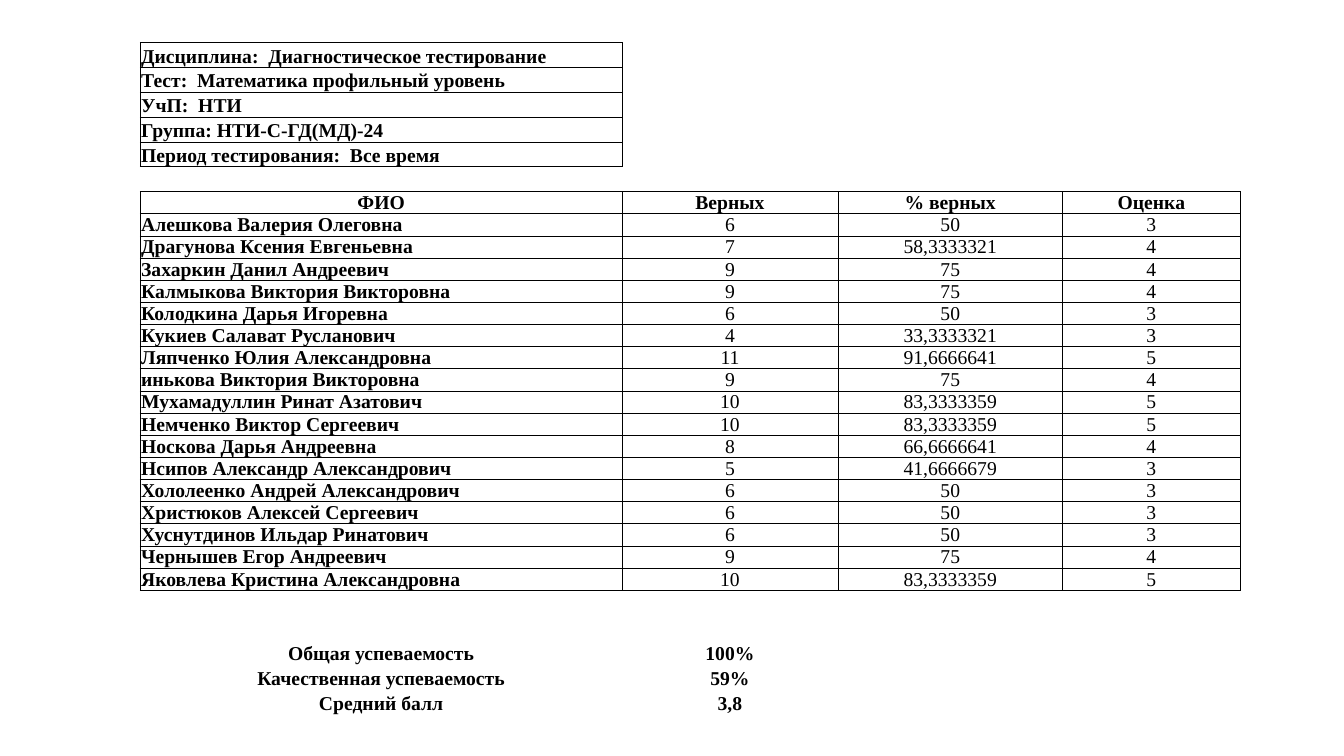
from dataclasses import dataclass

from lxml import etree
from pptx import Presentation, util as u
from pptx.dml.color import RGBColor
from pptx.enum import text
from pptx.oxml import ns


@dataclass
class Theme:
    ink: str = "000000"
    font: str = "Times New Roman"
    size: int = 14
    line: float = 0.5
    style: str = "{2D5ABB26-0587-4C30-8999-92F81FD0307C}"  # no style, no grid


# Content
INTRO = [
    "Дисциплина:  Диагностическое тестирование",
    "Тест:  Математика профильный уровень",
    "УчП:  НТИ",
    "Группа: НТИ-С-ГД(МД)-24",
    "Период тестирования:  Все время",
]
HEAD = ["ФИО", "Верных", "% верных", "Оценка"]
MARKS = [
    ["Алешкова Валерия Олеговна", "6", "50", "3"],
    ["Драгунова Ксения Евгеньевна", "7", "58,3333321", "4"],
    ["Захаркин Данил Андреевич", "9", "75", "4"],
    ["Калмыкова Виктория Викторовна", "9", "75", "4"],
    ["Колодкина Дарья Игоревна", "6", "50", "3"],
    ["Кукиев Салават Русланович", "4", "33,3333321", "3"],
    ["Ляпченко Юлия Александровна", "11", "91,6666641", "5"],
    ["инькова Виктория Викторовна", "9", "75", "4"],
    ["Мухамадуллин Ринат Азатович", "10", "83,3333359", "5"],
    ["Немченко Виктор Сергеевич", "10", "83,3333359", "5"],
    ["Носкова Дарья Андреевна", "8", "66,6666641", "4"],
    ["Нсипов Александр Александрович", "5", "41,6666679", "3"],
    ["Хололеенко Андрей Александрович", "6", "50", "3"],
    ["Христюков Алексей Сергеевич", "6", "50", "3"],
    ["Хуснутдинов Ильдар Ринатович", "6", "50", "3"],
    ["Чернышев Егор Андреевич", "9", "75", "4"],
    ["Яковлева Кристина Александровна", "10", "83,3333359", "5"],
]
TOTALS = [
    ["Общая успеваемость", "100%"],
    ["Качественная успеваемость", "59%"],
    ["Средний балл", "3,8"],
]
WIDTHS = [4.78, 2.14, 2.23, 1.76]
SIDES = {"lnL": (0, -1), "lnR": (0, 1), "lnT": (-1, 0), "lnB": (1, 0)}


class Sheet:
    def __init__(self, slide, theme):
        self.slide, self.theme = slide, theme

    def table(self, left, top, widths, high, rows, framed):
        count = len(rows)
        shape = self.slide.shapes.add_table(
            count, len(widths), u.Inches(left), u.Inches(top),
            u.Inches(sum(widths)), u.Inches(high * count))
        grid = shape.table
        grid.first_row = grid.horz_banding = False
        props = grid._tbl.tblPr
        props.find(ns.qn("a:tableStyleId")).text = self.theme.style
        for col, width in zip(grid.columns, widths):
            col.width = u.Inches(width)
        for row in grid.rows:
            row.height = u.Inches(high)
        for r, line in enumerate(rows):
            for c in range(len(widths)):
                cell = grid.cell(r, c)
                self.edges(cell, r, c, framed)
                cell.fill.background()
                self.label(cell, line[c] if c < len(line) else None)

    def edges(self, cell, r, c, framed):
        # An edge is ruled when the cell on either side of it is framed
        props = cell._tc.get_or_add_tcPr()
        for tag, (down, right) in SIDES.items():
            edge = etree.SubElement(props, ns.qn("a:" + tag))
            if (r, c) in framed or (r + down, c + right) in framed:
                edge.set("w", str(u.Pt(self.theme.line)))
                fill = etree.SubElement(edge, ns.qn("a:solidFill"))
                etree.SubElement(fill, ns.qn("a:srgbClr"), val=self.theme.ink)
            else:
                edge.set("w", "0")
                etree.SubElement(edge, ns.qn("a:noFill"))

    def label(self, cell, item):
        gap = u.Inches(0.01)
        form = {"margin_left": gap, "margin_right": gap, "margin_bottom": 0,
                "margin_top": 0 if item else gap,
                "vertical_anchor": text.MSO_ANCHOR.BOTTOM}
        for key, value in form.items():
            setattr(cell, key, value)
        par = cell.text_frame.paragraphs[0]
        if not item:
            etree.SubElement(par._p, ns.qn("a:endParaRPr"),
                             sz=str(self.theme.size * 100))
            return
        words, bold, align = item
        par.alignment = align
        run = par.add_run()
        run.text = words
        run.font.color.rgb = RGBColor.from_string(self.theme.ink)
        form = {"name": self.theme.font, "size": u.Pt(self.theme.size),
                "bold": bold}
        for key, value in form.items():
            setattr(run.font, key, value)


def main():
    deck = Presentation()
    deck.slide_width, deck.slide_height = u.Inches(13.33), u.Inches(7.5)
    sheet = Sheet(deck.slides.add_slide(deck.slide_layouts[6]), Theme())

    # Each entry holds its wording, weight and alignment
    left, mid = text.PP_ALIGN.LEFT, text.PP_ALIGN.CENTER
    intro = [[(words, True, left)] for words in INTRO]
    head = [[(words, True, mid) for words in HEAD]]
    marks = [[(name, True, left)] + [(mark, False, mid) for mark in rest]
             for name, *rest in MARKS]
    totals = [[(words, True, mid) for words in line] for line in TOTALS]

    # Intro, marks and totals, with unruled rows between them
    rows = intro + [[]] + head + marks + [[], []] + totals
    last = len(rows) - len(totals)
    framed = {(r, c) for r, line in enumerate(rows[:last])
              for c in range(len(line))}
    sheet.table(1.39, 0.42, WIDTHS, 0.22, rows, framed)
    deck.save("out.pptx")


if __name__ == "__main__":
    main()
